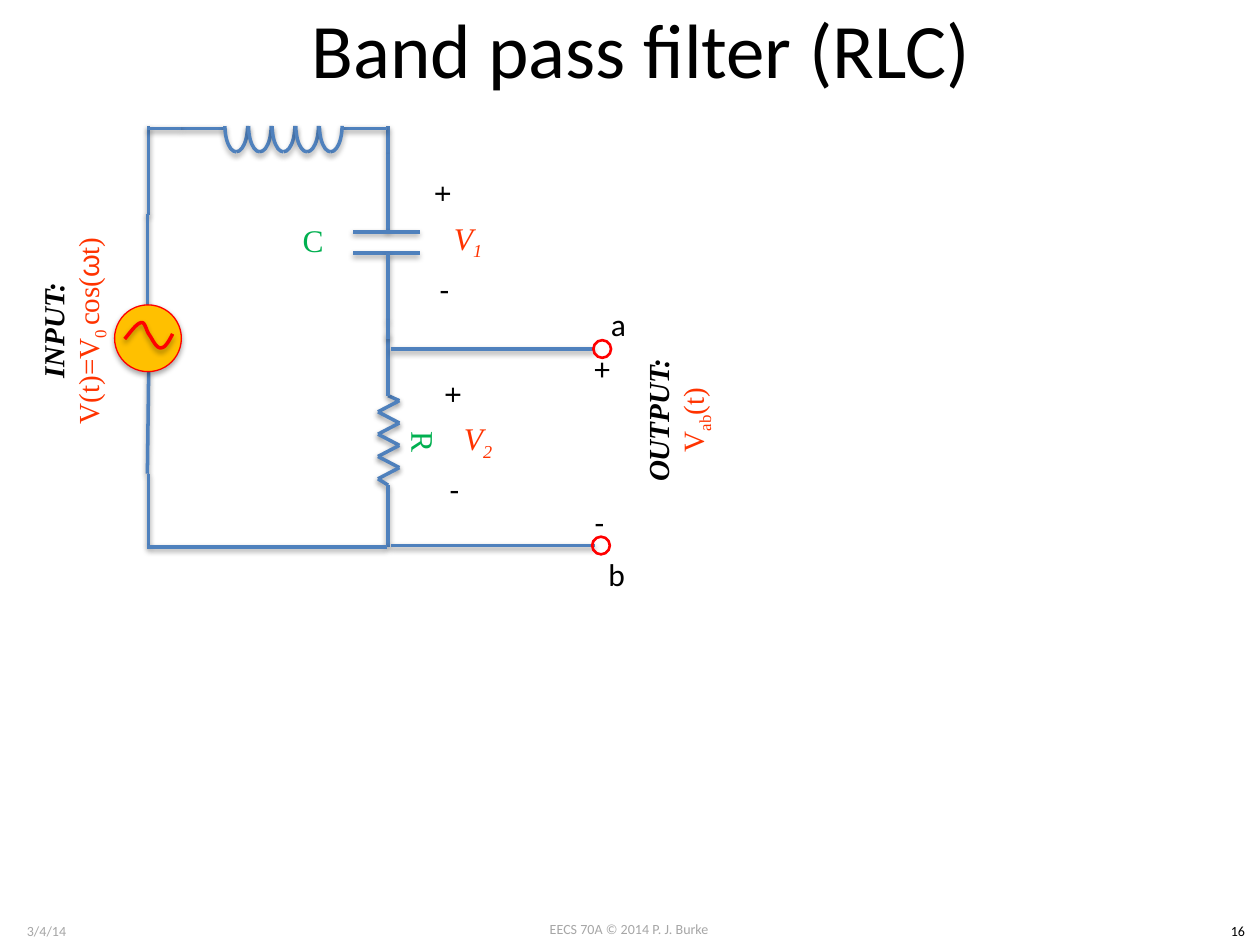
from pptx import Presentation
from pptx.util import Inches, Pt
from pptx.dml.color import RGBColor
from pptx.enum.shapes import MSO_SHAPE as Kind, MSO_CONNECTOR as Link
from pptx.enum.text import PP_ALIGN as Align, MSO_ANCHOR as Anchor

HUE = {"wire": "4F81BD", "red": "FF0000", "gold": "FFC000", "green": "00B050",
       "orange": "FF3300", "black": "000000", "gray": "A6A6A6"}
HUE = {name: RGBColor.from_string(code) for name, code in HUE.items()}
SIGN = {"size": Pt(18), "name": "Calibri", "hue": "black"}
PART = {"size": Pt(18), "name": "Times New Roman", "hue": "green"}
VOLT = PART | {"hue": "orange", "italic": True}
HEAD = {"size": Pt(16.6), "name": "Times New Roman", "hue": "black", "bold": True, "italic": True}
EQN = {"size": Pt(16.6), "name": "Times New Roman", "hue": "orange"}
FOOT = {"size": Pt(8), "name": "Calibri", "hue": "gray"}
SUB = {"sub": True}

deck = Presentation()
deck.slide_width, deck.slide_height = Inches(10), Inches(7.5)
slide = deck.slides.add_slide(deck.slide_layouts[5])
shapes = slide.shapes


def write(at, lines, wrap=True, mid=True, turn=0):
    box = shapes.add_textbox(*map(Inches, at))
    box.rotation = turn
    frame = box.text_frame
    frame.word_wrap = wrap
    frame.vertical_anchor = Anchor.MIDDLE if mid else Anchor.TOP
    for row, runs in enumerate(lines):
        para = frame.add_paragraph() if row else frame.paragraphs[0]
        para.alignment = Align.CENTER if wrap else Align.LEFT
        for words, form in runs:
            run = para.add_run()
            run.text = words
            for key, value in form.items():
                if key == "hue":
                    run.font.color.rgb = HUE[value]
                elif key == "sub":
                    run._r.get_or_add_rPr().set("baseline", "-25000")
                else:
                    setattr(run.font, key, value)


def wire(x1, y1, x2, y2):
    line = shapes.add_connector(Link.STRAIGHT, *map(Inches, (x1, y1, x2, y2)))
    line.line.color.rgb = HUE["wire"]
    line.line.width = Pt(2)


title = shapes.title
title.left, title.top, title.width, title.height = map(Inches, (0.59, -0.25, 9, 1.25))
title.text_frame.text = "Band pass filter (RLC)"
title.text_frame.vertical_anchor = Anchor.MIDDLE
font = title.text_frame.paragraphs[0].runs[0].font
for key, value in {"size": Pt(44), "name": "Calibri"}.items():
    setattr(font, key, value)
font.color.rgb = HUE["black"]

for at, words, hue in [
    ((3.83, 7.26, 2.33, 0.24), "EECS 70A © 2014 P. J. Burke", "gray"),
    ((0, 7.27, 0.74, 0.24), "3/4/14", "gray"),
    ((9.65, 7.27, 0.35, 0.24), "16", "black"),
]:
    write(at, [[(words, FOOT | {"hue": hue})]], mid=False)

zigzag = [(3.08, 3.14)]
zigzag += [(3 if i % 2 else 3.17, 3.18 + 0.62 * i / 7) for i in range(8)]
zigzag += [(3.08, 3.85)]
for start, end in zip(zigzag, zigzag[1:]):
    wire(*start, *end)

for ends in [
    (3.08, 2.65, 3.08, 3.14), (3.08, 3.85, 3.08, 4.34),
    (3.08, 1, 3.08, 1.22), (3.08, 1.22, 3.08, 1.84),
    (3.33, 1.84, 2.8, 1.84), (3.33, 2.01, 2.8, 2.01),
    (3.08, 2.01, 3.08, 2.54), (3.08, 2.54, 3.08, 2.69),
    (1.18, 1.71, 1.18, 1), (1.17, 2.42, 1.17, 1.7),
    (1.17, 3.76, 1.18, 2.95), (1.18, 3.76, 1.18, 4.33),
    (3.1, 2.77, 4.72, 2.77), (3.1, 4.33, 4.72, 4.33),
    (2.72, 1.02, 3.07, 1.02), (1.44, 1.02, 1.79, 1.02),
    (1.44, 1.02, 1.17, 1.02), (1.17, 4.34, 3.07, 4.34),
]:
    wire(*ends)

for i in range(5):
    for flip in (False, True):
        arc = shapes.add_shape(Kind.ARC, *map(Inches, (1.67 + 0.1875 * i, 0.91, 0.41, 0.18)))
        arc.rotation = 90
        if flip:
            arc._element.spPr.xfrm.set("flipV", "1")
        arc.fill.background()
        arc.line.color.rgb = HUE["wire"]
        arc.line.width = Pt(2)

source = shapes.add_shape(Kind.OVAL, *map(Inches, (0.91, 2.42, 0.53, 0.53)))
source.fill.solid()
source.fill.fore_color.rgb = HUE["gold"]
source.line.color.rgb = HUE["red"]
source.line.width = Pt(0.75)

knots = [(0.99, 2.69), (1.04, 2.63), (1.08, 2.57), (1.12, 2.56), (1.15, 2.55),
         (1.16, 2.62), (1.18, 2.65), (1.21, 2.69), (1.24, 2.77), (1.28, 2.76),
         (1.31, 2.76), (1.34, 2.71), (1.37, 2.65)]
curve = []
for i in range(0, 12, 3):
    for step in range(1, 9):
        t = step / 8
        mix = ((1 - t) ** 3, 3 * t * (1 - t) ** 2, 3 * t * t * (1 - t), t ** 3)
        curve.append([Inches(sum(m * k[axis] for m, k in zip(mix, knots[i:i + 4])))
                      for axis in (0, 1)])
pen = shapes.build_freeform(*map(Inches, knots[0]))
pen.add_line_segments(curve, close=False)
sine = pen.convert_to_shape()
sine.fill.background()
sine.line.color.rgb = HUE["red"]
sine.line.width = Pt(2)

for x, y in [(4.71, 2.7), (4.7, 4.26)]:
    ring = shapes.add_shape(Kind.OVAL, *map(Inches, (x, y, 0.14, 0.14)))
    ring.shadow.inherit = False
    ring.fill.background()
    ring.line.color.rgb = HUE["red"]
    ring.line.width = Pt(1.5)

write((2.77, 3.14, 1.19, 0.73), [[("R", PART)]], turn=90)
write((1.89, 1.54, 1.19, 0.73), [[("C", PART)]])

for x, y, mark in [(3.33, 1.6, "1"), (3.41, 3.19, "2")]:
    write((x, y, 0.77, 0.61), [[("V", VOLT), (mark, VOLT | SUB)]])

for x, y, width, sign, turn in [
    (3.37, 1.35, 0.33, "+", 90), (3.39, 2.09, 0.28, "-", 0),
    (3.45, 2.94, 0.33, "+", 90), (3.47, 3.68, 0.28, "-", 0),
    (4.62, 2.72, 0.33, "+", 0), (4.62, 3.94, 0.28, "-", 0),
    (4.75, 2.37, 0.32, "a", 0), (4.73, 4.36, 0.34, "b", 0),
]:
    write((x, y, width, 0.4), [[(sign, SIGN)]], wrap=False, mid=False, turn=turn)

write((-0.48, 2.32, 2.11, 0.61), [
    [("INPUT:", HEAD)],
    [("V(t)=V", EQN), ("0 ", EQN | SUB), ("cos(", EQN),
     ("ω", EQN | {"name": "Arial"}), ("t)", EQN)],
], turn=270)
write((4.32, 3.03, 2.11, 0.61), [
    [("OUTPUT:", HEAD)],
    [("V", EQN), ("ab", EQN | SUB), ("(t)", EQN)],
], turn=270)

deck.save("out.pptx")
